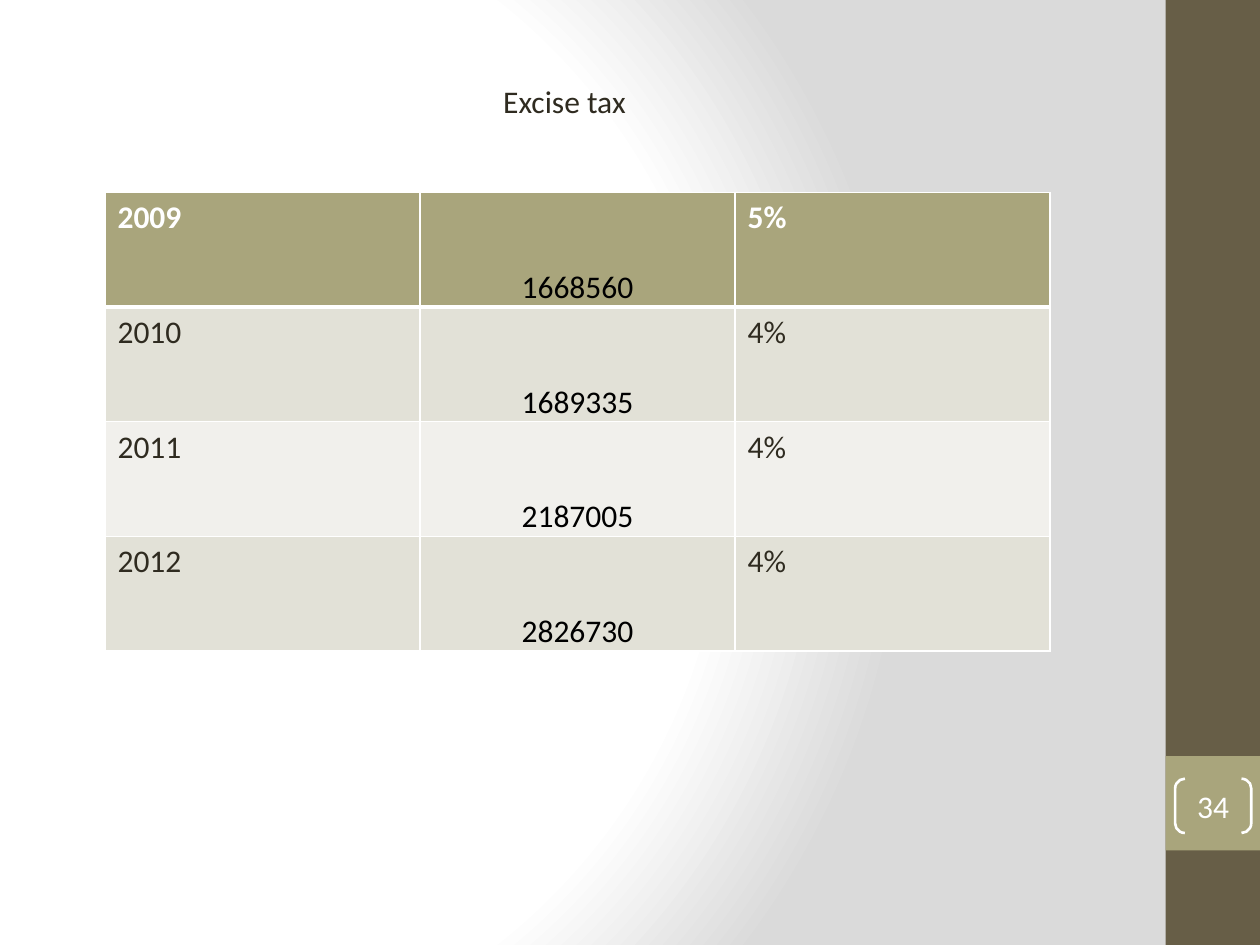
from pptx import Presentation
from pptx.dml.color import RGBColor
from pptx.enum.shapes import MSO_SHAPE
from pptx.enum.text import MSO_ANCHOR, PP_ALIGN
from pptx.oxml import parse_xml
from pptx.oxml.ns import nsdecls, qn
from pptx.util import Pt

RECTANGLE, BRACKETS = MSO_SHAPE.RECTANGLE, MSO_SHAPE.DOUBLE_BRACKET
MIDDLE, BOTTOM = MSO_ANCHOR.MIDDLE, MSO_ANCHOR.BOTTOM
LEFT, CENTER = PP_ALIGN.LEFT, PP_ALIGN.CENTER
WHITE, INK, BLACK = "FFFFFF", "2F2B20", "000000"
BROWN, OLIVE = "675E47", "A9A57C"
BANDS = ["E2E1D7", "F1F0EC"]


def rgb(value):
    return RGBColor.from_string(value)


def write(frame, text, color=INK, bold=False, align=LEFT):
    paragraph = frame.paragraphs[0]
    paragraph.alignment = align
    run = paragraph.add_run()
    run.text = text
    run.font.name = "Calibri"
    run.font.size = Pt(18)
    run.font.bold = bold
    run.font.color.rgb = rgb(color)


deck = Presentation()
deck.slide_width, deck.slide_height = Pt(720), Pt(540)
slide = deck.slides.add_slide(deck.slide_layouts[6])

slide.background.fill.solid()
backdrop = slide._element.find(".//" + qn("p:bgPr"))
stops = "".join(
    f'<a:gs pos="{position}"><a:srgbClr val="{color}"/></a:gs>'
    for position, color in [(0, WHITE), (75000, WHITE), (100000, "DADADA")]
)
backdrop.replace(backdrop[0], parse_xml(
    f'<a:gradFill {nsdecls("a")} rotWithShape="1"><a:gsLst>{stops}</a:gsLst>'
    '<a:path path="circle"><a:fillToRect l="20000" t="50000" r="100000" b="50000"/>'
    '</a:path></a:gradFill>'
))

for top, height, color in [(0, 540, BROWN), (432, 54, OLIVE)]:
    band = slide.shapes.add_shape(RECTANGLE, Pt(666), Pt(top), Pt(54), Pt(height))
    band.shadow.inherit = False
    band.fill.solid()
    band.fill.fore_color.rgb = rgb(color)
    band.line.fill.background()

page_number = slide.shapes.add_shape(BRACKETS, Pt(671.5), Pt(445), Pt(43.5), Pt(31))
page_number.adjustments[0] = 0.18
page_number.shadow.inherit = False
page_number.fill.background()
page_number.line.color.rgb = rgb(WHITE)
page_number.line.width = Pt(1.5)
number_frame = page_number.text_frame
number_frame.margin_left = number_frame.margin_right = 0
number_frame.margin_top = number_frame.margin_bottom = 0
number_frame.vertical_anchor = MIDDLE
write(number_frame, "34", color=WHITE, align=CENTER)

heading = slide.shapes.add_textbox(Pt(280.5), Pt(43.5), Pt(119), Pt(29))
heading.text_frame.word_wrap = True
write(heading.text_frame, "Excise tax")

receipts = [
    ("2009", "1668560", "5%"),
    ("2010", "1689335", "4%"),
    ("2011", "2187005", "4%"),
    ("2012", "2826730", "4%"),
]
tax_table = slide.shapes.add_table(
    len(receipts), 3, Pt(60), Pt(110), Pt(540), Pt(262)
).table
for row, values in enumerate(receipts):
    tax_table.rows[row].height = Pt(65.5)
    header = row == 0
    for column, value in enumerate(values):
        cell = tax_table.cell(row, column)
        widths = {"L": 1, "R": 1, "T": 3 if row == 1 else 1, "B": 3 if header else 1}
        for side, width in widths.items():
            cell._tc.get_or_add_tcPr().append(parse_xml(
                f'<a:ln{side} {nsdecls("a")} w="{Pt(width)}"><a:solidFill>'
                f'<a:srgbClr val="{WHITE}"/></a:solidFill></a:ln{side}>'
            ))
        cell.fill.solid()
        cell.fill.fore_color.rgb = rgb(OLIVE if header else BANDS[(row - 1) % 2])
        if column == 1:
            cell.vertical_anchor = BOTTOM
            cell.margin_left = cell.margin_right = cell.margin_top = Pt(0.75)
            cell.margin_bottom = 0
            write(cell.text_frame, value, color=BLACK, align=CENTER)
        else:
            write(cell.text_frame, value, color=WHITE if header else INK, bold=header)

deck.save("out.pptx")
